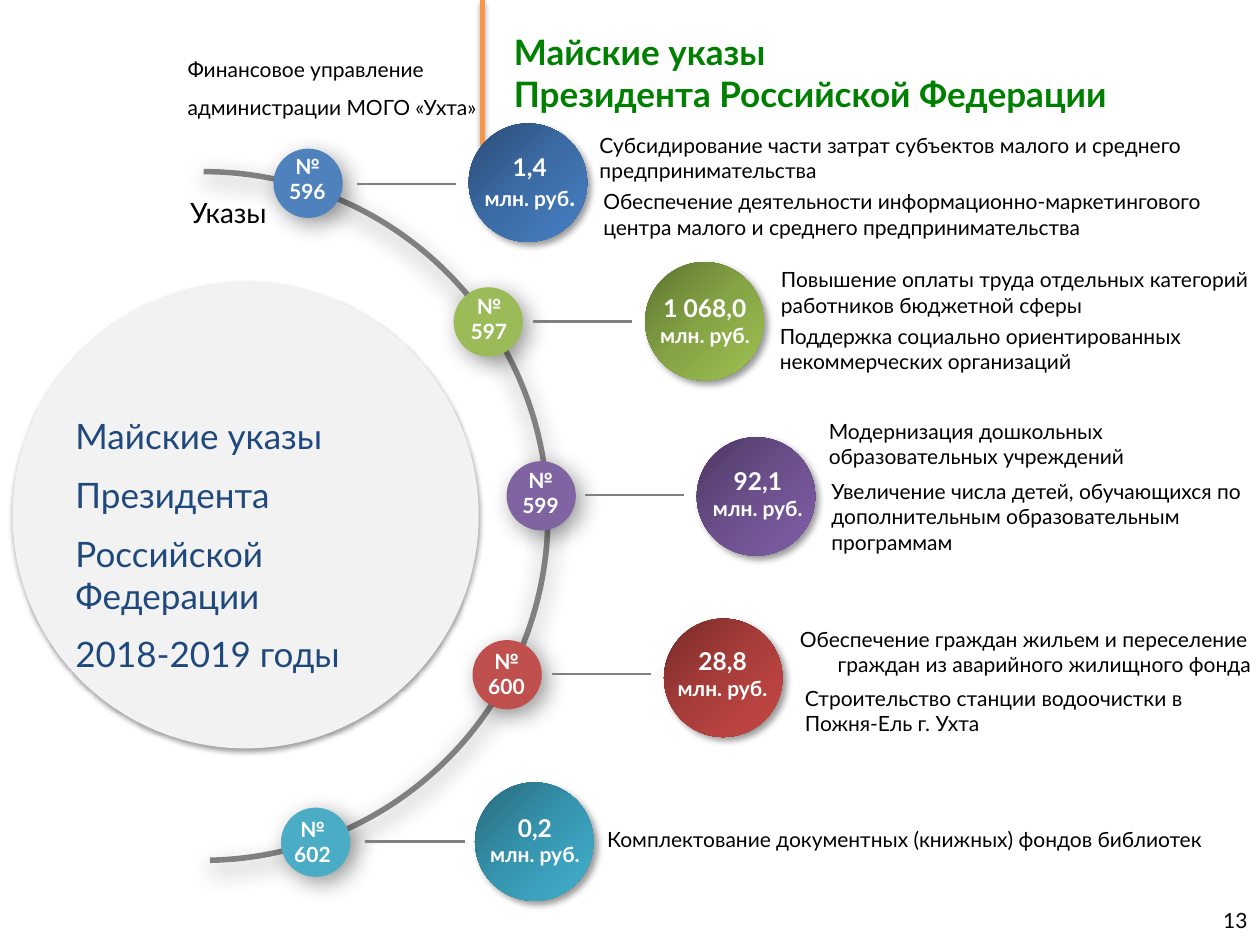
from pptx import Presentation
from pptx.dml.color import RGBColor
from pptx.enum.shapes import MSO_CONNECTOR, MSO_SHAPE
from pptx.enum.text import MSO_ANCHOR, PP_ALIGN
from pptx.oxml import parse_xml
from pptx.oxml.ns import nsdecls, qn
from pptx.util import Inches, Pt

COLORS = {
    "black": "000000", "white": "FFFFFF", "title": "008000", "navy": "1F497D",
    "gray": "808080", "pale": "F2F2F2", "orange": "F79646", "blue": "4F81BD",
    "green": "9BBB59", "purple": "8064A2", "red": "C0504D", "teal": "4BACC6",
}
GRADIENTS = {
    "blue": ("2A4C75", "3C6CA6", "4780C5"),
    "green": ("5D7330", "85A445", "9EC252"),
    "purple": ("4C3863", "6C508C", "805FA7"),
    "red": ("772B29", "A93D3A", "C94844"),
    "teal": ("27697B", "3795AF", "42B1CF"),
}
SHADOWS = {
    "bar": (35, 3.1, 1.8, 90), "disc": (38, 3.1, 1.6, 90), "arc": (40, 13, 5, 90),
    "badge": (40, 13, 5, 45), "amount": (40, 4, 3, 45),
}
BADGE_SIZE = 0.55
AMOUNT_SIZE = 0.94
LINK_LENGTH = 0.79

UNIT = [("млн. руб.", 12)]
DECREES = [
    ("596", "blue", (2.17, 1.18), (2.18, 1.17), (2.83, 1.46), (3.72, 0.98),
     (3.7, 1.16), "1,4", [("млн. руб", 12), (".", 14)]),
    ("597", "green", (3.6, 2.28), (3.62, 2.28), (4.23, 2.55), (5.12, 2.08),
     (5.09, 2.28), "1 068,0", UNIT),
    ("599", "purple", (4.02, 3.66), (4.03, 3.66), (4.64, 3.93), (5.53, 3.47),
     (5.51, 3.65), "92,1", UNIT),
    ("600", "red", (3.75, 5.08), (3.76, 5.1), (4.38, 5.35), (5.27, 4.91),
     (5.23, 5.08), "28,8", UNIT),
    ("602", "teal", (2.23, 6.41), (2.22, 6.43), (2.9, 6.68), (3.77, 6.21),
     (3.74, 6.4), "0,2", UNIT),
]
MEASURES = [
    ((4.66, 1, 5.36, 0.5),
     ["Субсидирование части затрат субъектов малого и среднего предпринимательства"], 0),
    ((4.69, 1.45, 5.36, 0.5),
     ["Обеспечение деятельности информационно-маркетингового центра малого "
      "и среднего предпринимательства"], 0),
    ((6.1, 2.07, 4.2, 0.5),
     ["Повышение оплаты труда отдельных категорий работников бюджетной сферы"], 0),
    ((6.09, 2.52, 4.11, 0.5),
     ["Поддержка социально ориентированных некоммерческих организаций"], 0),
    ((6.48, 3.27, 3.66, 0.5),
     ["Модернизация дошкольных образовательных учреждений"], 0),
    ((6.5, 3.75, 3.5, 0.71),
     ["Увеличение числа детей, обучающихся по дополнительным образовательным программам"], 0),
    ((6.25, 4.92, 3.82, 0.5),
     ["Обеспечение граждан жильем и переселение граждан из аварийного жилищного фонда"], 0.3),
    ((6.29, 5.39, 3.82, 0.5),
     ["Строительство станции водоочистки в", "Пожня-Ель г. Ухта"], 0),
    ((4.72, 6.51, 5.24, 0.3),
     ["Комплектование документных (книжных) фондов библиотек"], 0),
]


class SlideBuilder:
    def __init__(self, slide, font_name):
        self.slide = slide
        self.font_name = font_name

    def color(self, name):
        return RGBColor.from_string(COLORS[name])

    def apply(self, target, values):
        for name, value in values.items():
            setattr(target, name, value)

    def shadow(self, shape, name):
        alpha, blur, distance, angle = SHADOWS[name]
        effects = shape._element.spPr.find(qn("a:effectLst"))
        effects.append(parse_xml(
            f'<a:outerShdw {nsdecls("a")} blurRad="{Pt(blur)}" dist="{Pt(distance)}" '
            f'dir="{angle * 60000}" algn="ctr" rotWithShape="0">'
            f'<a:srgbClr val="{COLORS["black"]}"><a:alpha val="{alpha * 1000}"/></a:srgbClr>'
            '</a:outerShdw>'))

    def shape(self, kind, left, top, size, color, shadow):
        shape = self.slide.shapes.add_shape(
            kind, Inches(left), Inches(top), Inches(size), Inches(size))
        shape.fill.solid()
        shape.fill.fore_color.rgb = self.color(color)
        shape.line.fill.background()
        shape.shadow.inherit = False
        self.shadow(shape, shadow)
        return shape

    def circle(self, left, top, size, color, shadow):
        return self.shape(MSO_SHAPE.OVAL, left, top, size, color, shadow)

    def gradient_circle(self, left, top, size, color, shadow):
        shape = self.circle(left, top, size, color, shadow)
        stops = "".join(
            f'<a:gs pos="{index * 50000}"><a:srgbClr val="{value}"/></a:gs>'
            for index, value in enumerate(GRADIENTS[color]))
        properties = shape._element.spPr
        properties.replace(properties.find(qn("a:solidFill")), parse_xml(
            f'<a:gradFill {nsdecls("a")} rotWithShape="1"><a:gsLst>{stops}</a:gsLst>'
            '<a:lin ang="2700000" scaled="0"/></a:gradFill>'))

    def arc(self, left, top, size, color, rotation, adjustments):
        shape = self.shape(MSO_SHAPE.BLOCK_ARC, left, top, size, color, "arc")
        shape.rotation = rotation
        for index, value in enumerate(adjustments):
            shape.adjustments[index] = value

    def line(self, start, end, color, width, shadow=None):
        connector = self.slide.shapes.add_connector(
            MSO_CONNECTOR.STRAIGHT, *(Inches(value) for value in (*start, *end)))
        connector.line.color.rgb = self.color(color)
        connector.line.width = Pt(width)
        connector._element.spPr.append(parse_xml(f'<a:effectLst {nsdecls("a")}/>'))
        if shadow:
            self.shadow(connector, shadow)

    def text(self, box, paragraphs, size=12, color="black", bold=False, wrap=True,
             align=PP_ALIGN.LEFT, anchor=MSO_ANCHOR.TOP, spacing=1, gap=0, hanging=0):
        shape = self.slide.shapes.add_textbox(*(Inches(value) for value in box))
        frame = shape.text_frame
        self.apply(frame, {"word_wrap": wrap, "vertical_anchor": anchor})
        for index, content in enumerate(paragraphs):
            paragraph = frame.add_paragraph() if index else frame.paragraphs[0]
            self.apply(paragraph, {
                "alignment": align, "line_spacing": spacing,
                "space_before": Pt(gap if index else 0)})
            if hanging:
                properties = paragraph._p.get_or_add_pPr()
                properties.set("marL", str(Inches(hanging)))
                properties.set("indent", str(-Inches(hanging)))
            runs = [(content, size)] if isinstance(content, str) else content
            for words, points in runs:
                for number, part in enumerate(words.split("\n")):
                    if number:
                        paragraph.add_line_break()
                    run = paragraph.add_run()
                    run.text = part
                    self.apply(run.font, {
                        "name": self.font_name, "size": Pt(points), "bold": bold})
                    run.font.color.rgb = self.color(color)


def main():
    presentation = Presentation()
    presentation.slide_width = Inches(10)
    presentation.slide_height = Inches(7.5)
    slide = presentation.slides.add_slide(presentation.slide_layouts[6])
    builder = SlideBuilder(slide, "Lato")

    builder.text((1.39, 0.3, 2.5, 0.66),
                 ["Финансовое управление", "администрации МОГО «Ухта»"],
                 wrap=False, spacing=1.5)
    builder.line((3.83, 0), (3.83, 1.15), "orange", 3, "bar")
    builder.text((3.98, 0, 6.02, 1.15),
                 ["Майские указы\nПрезидента Российской Федерации"],
                 size=20, color="title", bold=True, anchor=MSO_ANCHOR.MIDDLE)
    builder.text((7.67, 7.1, 2.33, 0.4), ["13"],
                 align=PP_ALIGN.RIGHT, anchor=MSO_ANCHOR.MIDDLE)
    builder.circle(0.1, 2.24, 3.7, "pale", "disc")
    builder.arc(-1.14, 1.34, 5.51, "gray", 90, (108, 215.355, 0.008))
    builder.text((0.5, 3.24, 3.19, 1.85),
                 ["Майские указы", "Президента", "Российской\nФедерации", "2018-2019 годы"],
                 size=20, color="navy", gap=9.6)
    builder.text((1.41, 1.5, 0.82, 0.37), ["Указы"], size=16, wrap=False)

    label = {"color": "white", "bold": True, "wrap": False, "align": PP_ALIGN.CENTER}
    for number, color, badge, badge_text, link, disc, disc_text, amount, unit in DECREES:
        builder.circle(*badge, BADGE_SIZE, color, "badge")
        builder.line(link, (link[0] + LINK_LENGTH, link[1]), "gray", 1.5)
        builder.gradient_circle(*disc, AMOUNT_SIZE, color, "amount")
        builder.text((*badge_text, 0.52, 0.5), ["№", number], **label)
        builder.text((*disc_text, 1.01, 0.54), [[(amount, 14)], unit], **label)

    for box, paragraphs, hanging in MEASURES:
        builder.text(box, paragraphs, hanging=hanging)

    presentation.save("out.pptx")


if __name__ == "__main__":
    main()
